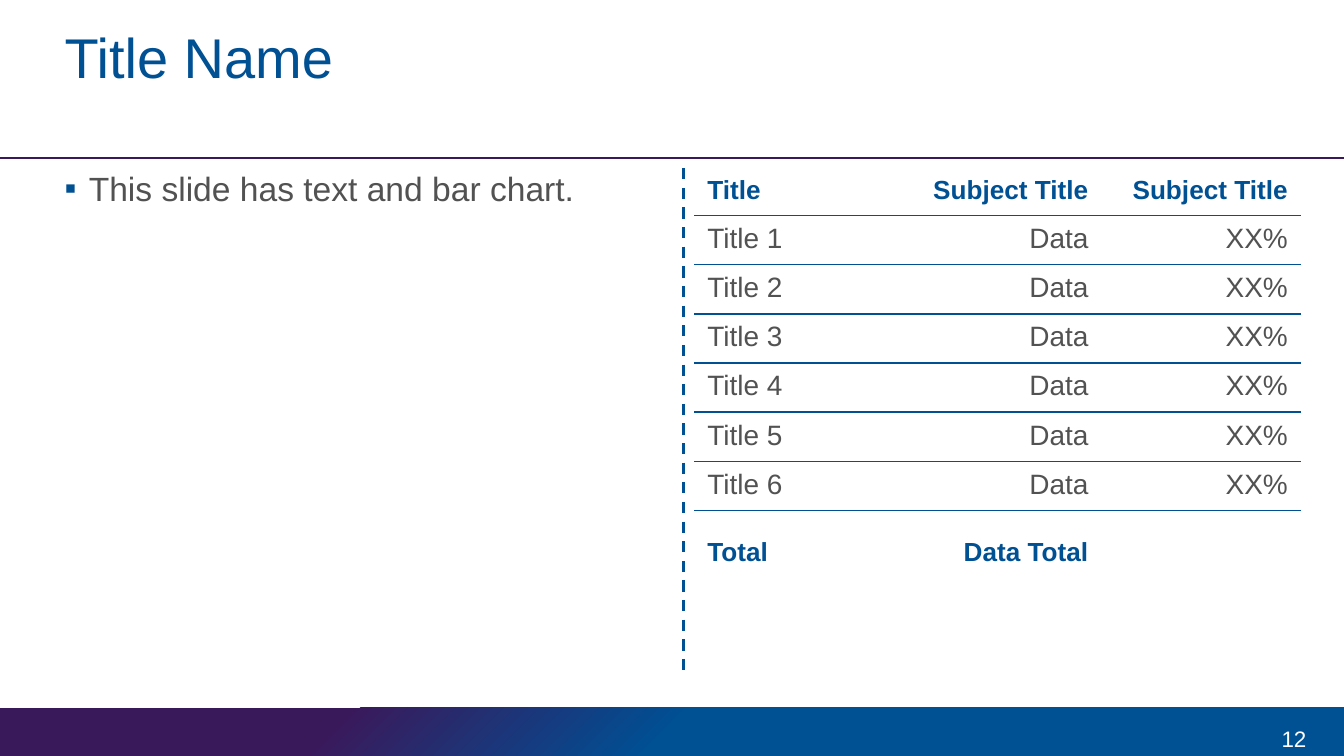
from lxml import etree
from pptx import Presentation
from pptx.dml.color import RGBColor
from pptx.enum import dml, shapes, text
from pptx.oxml import parse_xml
from pptx.oxml.ns import nsdecls, qn
from pptx.util import Cm, Pt

# Content
TITLE = "Title Name"
BULLET = "This slide has text and bar chart."
PAGE_NUMBER = "12"
HEADER = ("Title", "Subject Title", "Subject Title")
ITEMS = [(f"Title {n}", "Data", "XX%") for n in range(1, 7)]
TOTAL = ("Total", "Data Total", "")

# Style and measures in cm
BLUE, PURPLE, GREY, WHITE = "005094", "3A195B", "525252", "FFFFFF"
FONT = "Arial"
WIDTH, HEIGHT = 25.4, 14.29
MARGIN, CONTENT_TOP, CONTENT_HEIGHT = 1.22, 3.18, 9.63
FOOTER_HEIGHT = 0.91
TABLE_LEFT = 13.12
COLUMN_WIDTHS = (3.61, 4.09, 3.77)
ROW_HEIGHTS = [0.89] + [0.93] * len(ITEMS) + [1.63]
PLAIN_TABLE = "{2D5ABB26-0587-4C30-8999-92F81FD0307C}"


def color(hex_value):
    return RGBColor.from_string(hex_value)


def box(left, top, width, height):
    return Cm(left), Cm(top), Cm(width), Cm(height)


def write(frame, words, size, hex_value, bold=False, align=text.PP_ALIGN.LEFT):
    paragraph = frame.paragraphs[0]
    paragraph.alignment = align
    run = paragraph.add_run()
    run.text = words
    run.font.name, run.font.size, run.font.bold = FONT, Pt(size), bold
    run.font.color.rgb = color(hex_value)
    return paragraph


def set_insets(frame, left, top, right, bottom):
    frame.margin_left, frame.margin_top = Cm(left), Cm(top)
    frame.margin_right, frame.margin_bottom = Cm(right), Cm(bottom)
    frame.word_wrap = True


def add_rule(x1, y1, x2, y2, hex_value, width, dash=None):
    rule = slide.shapes.add_connector(
        shapes.MSO_CONNECTOR.STRAIGHT, Cm(x1), Cm(y1), Cm(x2), Cm(y2))
    rule.line.color.rgb = color(hex_value)
    rule.line.width = Pt(width)
    if dash:
        rule.line.dash_style = dash
    etree.SubElement(rule._element.spPr, qn("a:effectLst"))


def add_bottom_border(cell):
    cell._tc.get_or_add_tcPr().append(parse_xml(
        f'<a:lnB {nsdecls("a")} w="{Pt(1)}"><a:solidFill>'
        f'<a:srgbClr val="{BLUE}"/></a:solidFill></a:lnB>'))


prs = Presentation()
prs.slide_width, prs.slide_height = Cm(WIDTH), Cm(HEIGHT)
slide = prs.slides.add_slide(prs.slide_layouts[5])

# Footer band, radial gradient centred on its lower right corner
footer = slide.shapes.add_shape(
    shapes.MSO_SHAPE.RECTANGLE,
    *box(0, HEIGHT - FOOTER_HEIGHT, WIDTH, FOOTER_HEIGHT))
footer.shadow.inherit = False
footer.line.fill.background()
stops = "".join(
    f'<a:gs pos="{percent * 1000}"><a:srgbClr val="{hex_value}"/></a:gs>'
    for percent, hex_value in ((0, BLUE), (50, BLUE), (75, PURPLE)))
footer_geometry = footer._element.spPr.find(qn("a:prstGeom"))
footer_geometry.addnext(parse_xml(
    f'<a:gradFill {nsdecls("a")} rotWithShape="1"><a:gsLst>{stops}</a:gsLst>'
    '<a:path path="circle"><a:fillToRect l="100000" t="100000"/></a:path>'
    '</a:gradFill>'))

# Title rule and column divider
add_rule(0, 2.99, WIDTH, 2.99, PURPLE, 0.75)
add_rule(12.91, CONTENT_TOP, 12.91, CONTENT_TOP + CONTENT_HEIGHT, BLUE, 1.5,
         dml.MSO_LINE.DASH)

# Title
title = slide.shapes.title
title.left, title.top, title.width, title.height = box(MARGIN, 0.41, 23.19, 1.42)
set_insets(title.text_frame, 0, 0, 0, 0.13)
title.text_frame.auto_size = text.MSO_AUTO_SIZE.NONE
title.text_frame.vertical_anchor = text.MSO_ANCHOR.MIDDLE
write(title.text_frame, TITLE, 30, BLUE)

# Bullet text
body = slide.shapes.add_textbox(
    *box(MARGIN, CONTENT_TOP, 11.48, CONTENT_HEIGHT)).text_frame
set_insets(body, 0, 0, 0, 0.13)
bullet = write(body, BULLET, 18, GREY)._p.get_or_add_pPr()
bullet.set("marL", str(Cm(0.46)))
bullet.set("indent", str(-Cm(0.46)))
bullet_color = etree.SubElement(bullet, qn("a:buClr"))
etree.SubElement(bullet_color, qn("a:srgbClr"), val=BLUE)
etree.SubElement(bullet, qn("a:buFont"), typeface=FONT)
etree.SubElement(bullet, qn("a:buChar"), char="▪")

# Page number
page = slide.shapes.add_textbox(*box(23.52, 13.51, 1.42, 0.91)).text_frame
page.word_wrap = True
page.vertical_anchor = text.MSO_ANCHOR.MIDDLE
write(page, PAGE_NUMBER, 12, WHITE, align=text.PP_ALIGN.RIGHT)

# Table
rows = [HEADER, *ITEMS, TOTAL]
table = slide.shapes.add_table(
    len(rows), len(HEADER),
    *box(TABLE_LEFT, CONTENT_TOP, sum(COLUMN_WIDTHS), sum(ROW_HEIGHTS))).table
table.first_row = table.horz_banding = False
table._tbl.tblPr.find(qn("a:tableStyleId")).text = PLAIN_TABLE
for column, width in zip(table.columns, COLUMN_WIDTHS):
    column.width = Cm(width)

for r, (labels, height) in enumerate(zip(rows, ROW_HEIGHTS)):
    table.rows[r].height = Cm(height)
    strong = labels in (HEADER, TOTAL)
    size, hex_value = (14, BLUE) if strong else (15, GREY)
    for c, label in enumerate(labels):
        cell = table.cell(r, c)
        cell.margin_left = cell.margin_right = Cm(0.25)
        cell.margin_top = cell.margin_bottom = Cm(0.1)
        cell.vertical_anchor = text.MSO_ANCHOR.MIDDLE
        if labels is not TOTAL:
            add_bottom_border(cell)
        cell.fill.background()
        if label:
            align = text.PP_ALIGN.RIGHT if c else text.PP_ALIGN.LEFT
            write(cell.text_frame, label, size, hex_value, strong,
                  align).line_spacing = 0.9

prs.save("out.pptx")
